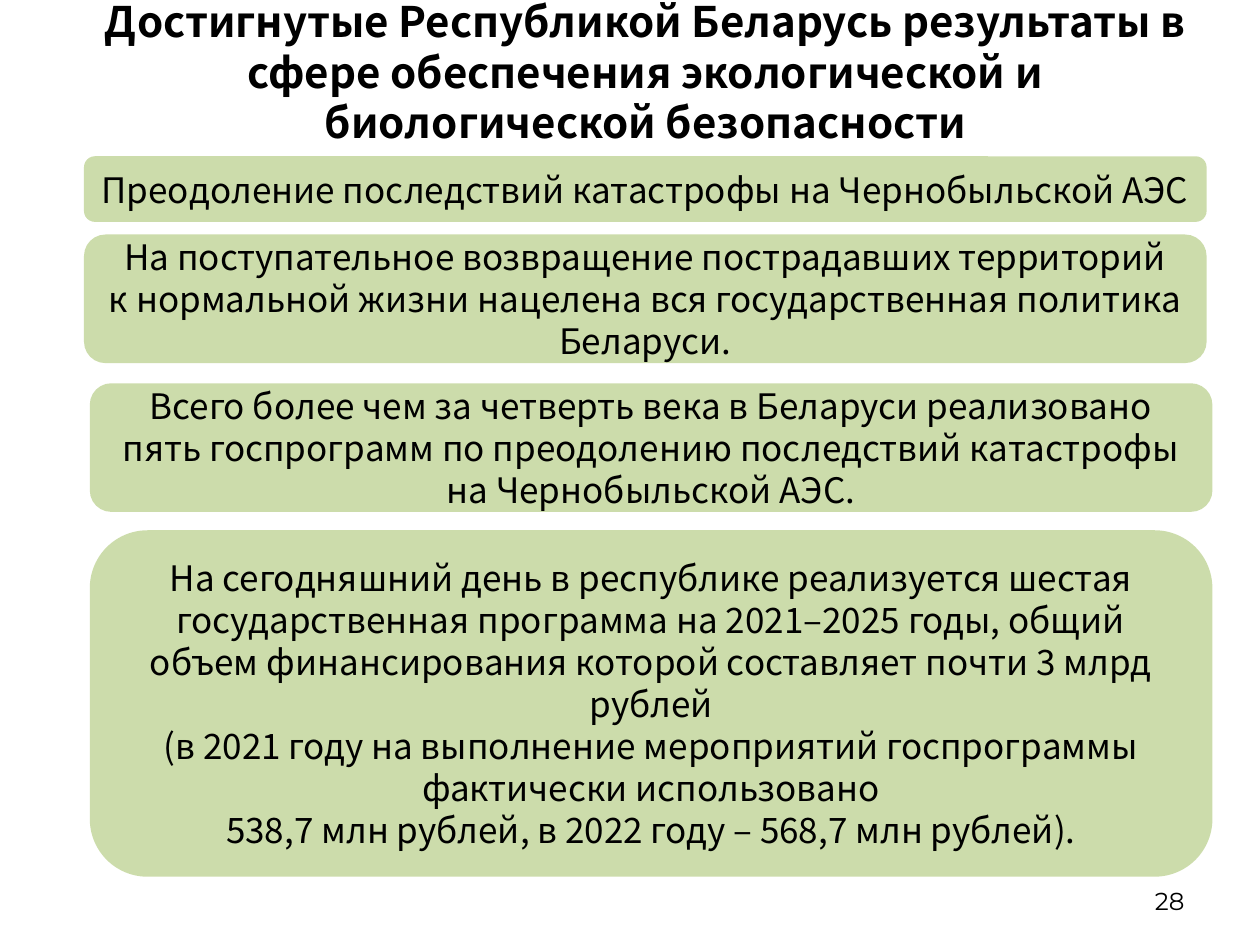
from lxml.etree import SubElement
from pptx import Presentation
from pptx.dml.color import RGBColor
from pptx.enum.shapes import MSO_SHAPE
from pptx.enum.text import MSO_ANCHOR, MSO_AUTO_SIZE, PP_ALIGN
from pptx.oxml.ns import qn
from pptx.util import Pt

GREEN = RGBColor(0x9B, 0xBB, 0x59)
BLACK = RGBColor(0x00, 0x00, 0x00)
TEXT_FONT = "Noto Sans CJK JP"
NUMBER_FONT = "Montserrat"


def format_text(text_frame, font_name, size, alignment, line_spacing, bold=False):
    text_frame.word_wrap = True
    text_frame.auto_size = MSO_AUTO_SIZE.NONE
    text_frame.vertical_anchor = MSO_ANCHOR.MIDDLE
    for paragraph in text_frame.paragraphs:
        paragraph.alignment = alignment
        paragraph.line_spacing = line_spacing
        for run in paragraph.runs:
            run.font.name = font_name
            run.font.size = Pt(size)
            run.font.bold = bold
            run.font.color.rgb = BLACK


presentation = Presentation()
presentation.slide_width = Pt(720)
presentation.slide_height = Pt(540)
slide = presentation.slides.add_slide(presentation.slide_layouts[5])

# Title
title = slide.shapes.title
title.left, title.top, title.width, title.height = Pt(44.6), Pt(-0.7), Pt(648), Pt(82.8)
title.text_frame.text = (
    "Достигнутые Республикой Беларусь результаты в сфере обеспечения "
    "экологической и биологической безопасности"
)
format_text(title.text_frame, TEXT_FONT, 24, PP_ALIGN.CENTER, Pt(29), bold=True)

# Green panels: left, top, height, text (\v is a line break, \n a new paragraph)
panels = [
    (48, 89.3, 37.5, "Преодоление последствий катастрофы на Чернобыльской АЭС"),
    (48, 134, 73.5,
     "На поступательное возвращение пострадавших территорий\v"
     "к нормальной жизни нацелена вся государственная политика Беларуси."),
    (51.3, 219, 73.5,
     "Всего более чем за четверть века в Беларуси реализовано пять госпрограмм "
     "по преодолению последствий катастрофы на Чернобыльской АЭС."),
    (51.3, 303, 198,
     "На сегодняшний день в республике реализуется шестая государственная "
     "программа на 2021–2025 годы, общий объем финансирования которой "
     "составляет почти 3 млрд рублей\v"
     "(в 2021 году на выполнение мероприятий госпрограммы фактически использовано\n"
     "538,7 млн рублей, в 2022 году – 568,7 млн рублей)."),
]
for left, top, height, text in panels:
    panel = slide.shapes.add_shape(
        MSO_SHAPE.ROUNDED_RECTANGLE, Pt(left), Pt(top), Pt(641.5), Pt(height))
    panel.shadow.inherit = False
    panel.line.fill.background()
    panel.fill.solid()
    panel.fill.fore_color.rgb = GREEN
    # Half-transparent fill
    color = panel.fill._xPr.find(qn("a:solidFill")).find(qn("a:srgbClr"))
    SubElement(color, qn("a:alpha"), val="50000")
    panel.text_frame.text = text
    format_text(panel.text_frame, TEXT_FONT, 20, PP_ALIGN.CENTER, Pt(24))

# Slide number
number = slide.shapes.add_textbox(Pt(516), Pt(500.5), Pt(168), Pt(28.8))
number.text_frame.text = "28"
format_text(number.text_frame, NUMBER_FONT, 14, PP_ALIGN.RIGHT, 1.0)

presentation.save("out.pptx")
